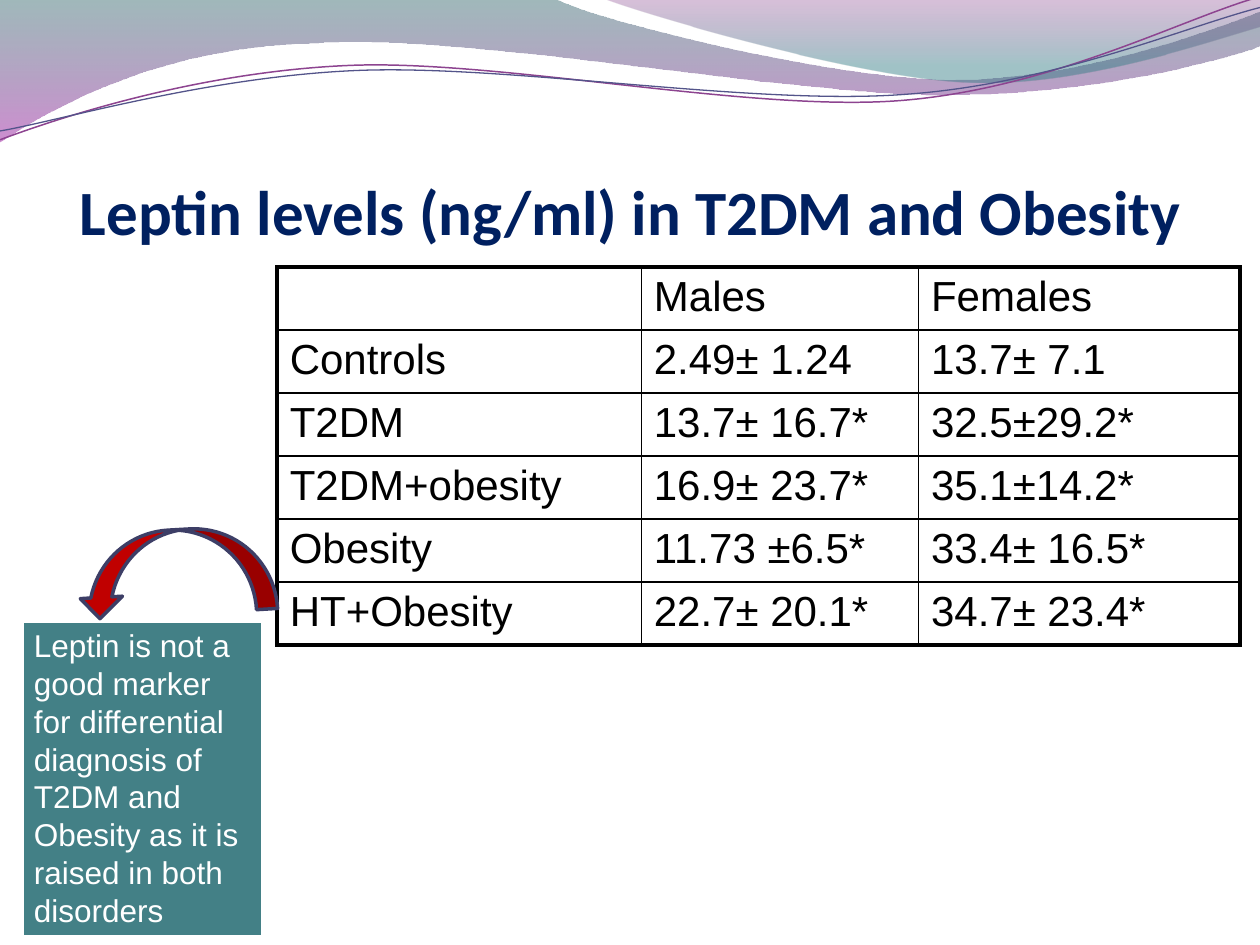
import math
from dataclasses import dataclass

from pptx import Presentation, oxml
from pptx import util as u
from pptx.dml import color
from pptx.enum import shapes, text
from pptx.oxml import ns

Inches, Pt = u.Inches, u.Pt


@dataclass(frozen=True)
class Theme:
    navy: str = "002060"
    black: str = "000000"
    white: str = "FFFFFF"
    teal: str = "438086"
    red: str = "C00000"
    edge: str = "3D3E66"
    plum: str = "8D4490"
    indigo: str = "53548A"
    head: str = "Calibri"
    body: str = "Arial"
    title: int = 36
    cell: int = 24
    note: int = 18
    thin: float = 1
    thick: float = 2.25


T = Theme()

ROWS = [
    ("", "Males", "Females"),
    ("Controls", "2.49± 1.24", "13.7± 7.1"),
    ("T2DM", "13.7± 16.7*", "32.5±29.2*"),
    ("T2DM+obesity", "16.9± 23.7*", "35.1±14.2*"),
    ("Obesity", "11.73 ±6.5*", "33.4± 16.5*"),
    ("HT+Obesity", "22.7± 20.1*", "34.7± 23.4*"),
]
COLS = (2.89, 2.2, 2.55)
NOTE = ("Leptin is not a good marker for differential diagnosis of "
        "T2DM and Obesity as it is raised in both disorders")

# Outlines: a pair is a line to a point, six numbers are a Bezier curve.
# Bands: outline, then gradient stops as (position, colour, opacity).
BANDS = [
    ([(0, 0), (4.4, -0.01), (4.76, 0.17, 6.64, 0.63, 7.58, 0.63),
      (8.53, 0.63, 9.58, 0.26, 10, 0.09), (10.01, 0.36),
      (9.83, 0.44, 8.7, 0.76, 7.46, 0.75), (6.22, 0.75, 3.82, 0.28, 2.57, 0.34),
      (1.29, 0.36, 0.46, 0.83, -0.01, 1.13), (0, 0)],
     [(0, "2D6368", 45), (1, "A530A9", 55)]),
    ([(4.79, -0.01), (5.09, 0.11, 6.82, 0.62, 7.69, 0.65),
      (8.56, 0.69, 9.61, 0.32, 10, 0.21), (10, 0), (4.79, -0.01)],
     [(0, "7F2F82", 30), (0.8, "2F7B82", 45)]),
]
# Curves: outline as it lies on the slide, colour, width
CURVES = [
    ([(0, 1.11), (0.48, 0.93, 1.58, 0.57, 2.77, 0.52),
      (3.95, 0.47, 5.93, 0.89, 7.13, 0.8), (8.33, 0.71, 9.38, 0.15, 9.98, -0.02)],
     T.plum, 0.85),
    ([(0, 1.04), (0.47, 0.96, 1.64, 0.61, 2.83, 0.56),
      (4.03, 0.51, 5.97, 0.84, 7.17, 0.75), (8.36, 0.67, 9.41, 0.21, 10, 0.06)],
     T.indigo, 0.75),
]
TILT = 2.7
PIVOT = (5, 0.58)


def rgb(code):
    return color.RGBColor.from_string(code)


def write(frame, words, font, size, ink, bold=False):
    run = frame.paragraphs[0].add_run()
    run.text = words
    run.font.name, run.font.size, run.font.bold = font, Pt(size), bold
    run.font.color.rgb = rgb(ink)


def pairs(part):
    return list(zip(part[::2], part[1::2]))


def level(part):
    """Turn the points of a part clockwise by the tilt."""
    sin, cos = math.sin(math.radians(TILT)), math.cos(math.radians(TILT))
    turned = []
    for x, y in pairs(part):
        dx, dy = x - PIVOT[0], y - PIVOT[1]
        turned += [PIVOT[0] + dx * cos - dy * sin, PIVOT[1] + dx * sin + dy * cos]
    return tuple(turned)


def add_path(slide, path, close):
    ends = [(Inches(p[-2]), Inches(p[-1])) for p in path]
    pen = slide.shapes.build_freeform(*ends[0])
    pen.add_line_segments(ends[1:], close=close)
    shape = pen.convert_to_shape()
    shape.shadow.inherit = False
    # Bend the segments that are curves
    lines = list(shape._element.iter(ns.qn("a:lnTo")))
    for line, part in zip(lines, path[1:]):
        if len(part) == 6:
            points = "".join(
                f'<a:pt x="{Inches(x) - shape.left}" y="{Inches(y) - shape.top}"/>'
                for x, y in pairs(part))
            line.getparent().replace(line, oxml.parse_xml(
                f'<a:cubicBezTo {ns.nsdecls("a")}>{points}</a:cubicBezTo>'))
    return shape


def add_band(slide, path, stops):
    shape = add_path(slide, path, True)
    shape.line.fill.background()
    shape.fill.gradient()
    shape.fill.gradient_angle = 270
    for stop, (place, code, _) in zip(shape.fill.gradient_stops, stops):
        stop.position = place
        stop.color.rgb = rgb(code)
    # Opacity of each stop
    tints = shape._element.spPr.iter(ns.qn("a:srgbClr"))
    for tint, (_, _, alpha) in zip(tints, stops):
        tint.append(oxml.parse_xml(
            f'<a:alpha {ns.nsdecls("a")} val="{alpha * 1000}"/>'))


def add_curve(slide, path, code, width):
    shape = add_path(slide, [level(part) for part in path], False)
    shape.rotation = -TILT
    shape.fill.background()
    shape.line.color.rgb = rgb(code)
    shape.line.width = Pt(width)
    return shape


def add_block(slide, kind, box, fill, line, width):
    shape = slide.shapes.add_shape(kind, *map(Inches, box))
    shape.shadow.inherit = False
    shape.fill.solid()
    shape.fill.fore_color.rgb = rgb(fill)
    shape.line.color.rgb = rgb(line)
    shape.line.width = Pt(width)
    return shape


def set_title(slide, words):
    title = slide.shapes.title
    title.left, title.top = Inches(0.28), Inches(0.67)
    title.width, title.height = Inches(9.45), Inches(1.3)
    frame = title.text_frame
    frame.margin_left = frame.margin_right = frame.margin_bottom = 0
    frame.margin_top = Inches(0.05)
    frame.vertical_anchor = text.MSO_ANCHOR.BOTTOM
    frame.paragraphs[0].alignment = text.PP_ALIGN.CENTER
    write(frame, words, T.head, T.title, T.navy, True)


def set_edges(cell, outer):
    """Rule the four sides, thick where a side is on the outside."""
    props = cell._tc.get_or_add_tcPr()
    for side, out in zip("LRTB", outer):
        width = Pt(T.thick if out else T.thin)
        props.append(oxml.parse_xml(
            f'<a:ln{side} {ns.nsdecls("a")} w="{width}"><a:solidFill>'
            f'<a:srgbClr val="{T.black}"/></a:solidFill></a:ln{side}>'))


def add_grid(slide):
    high = 0.5
    box = (2.2, 2.12, sum(COLS), high * len(ROWS))
    table = slide.shapes.add_table(len(ROWS), len(COLS), *map(Inches, box)).table
    table.first_row = table.horz_banding = False
    for col, width in zip(table.columns, COLS):
        col.width = Inches(width)
    for r, row in enumerate(ROWS):
        table.rows[r].height = Inches(high)
        for c, words in enumerate(row):
            cell = table.cell(r, c)
            set_edges(cell, (c == 0, c == len(COLS) - 1, r == 0, r == len(ROWS) - 1))
            cell.fill.background()
            if words:
                write(cell.text_frame, words, T.body, T.cell, T.black)


def add_note(slide):
    box = add_block(slide, shapes.MSO_SHAPE.RECTANGLE, (0.17, 4.92, 1.92, 2.52),
                    T.teal, T.white, 3)
    frame = box.text_frame
    frame.word_wrap = True
    frame.auto_size = text.MSO_AUTO_SIZE.SHAPE_TO_FIT_TEXT
    frame.vertical_anchor = text.MSO_ANCHOR.TOP
    frame.paragraphs[0].alignment = text.PP_ALIGN.LEFT
    write(frame, NOTE, T.body, T.note, T.white)


def main():
    deck = Presentation()
    deck.slide_width, deck.slide_height = Inches(10), Inches(7.5)
    slide = deck.slides.add_slide(deck.slide_layouts[5])
    # Waves along the top
    for band in BANDS:
        add_band(slide, *band)
    slide.shapes.add_group_shape([add_curve(slide, *curve) for curve in CURVES])
    # Title, in front of the waves
    set_title(slide, "Leptin levels (ng/ml) in T2DM and Obesity")
    slide.shapes._spTree.append(slide.shapes.title._element)
    # Table, remark and the arrow between them
    add_grid(slide)
    add_note(slide)
    arrow = add_block(slide, shapes.MSO_SHAPE.CURVED_RIGHT_ARROW,
                      (1.06, 3.75, 0.67, 1.58), T.red, T.edge, 2)
    arrow.rotation = 86.7
    deck.save("out.pptx")


if __name__ == "__main__":
    main()
